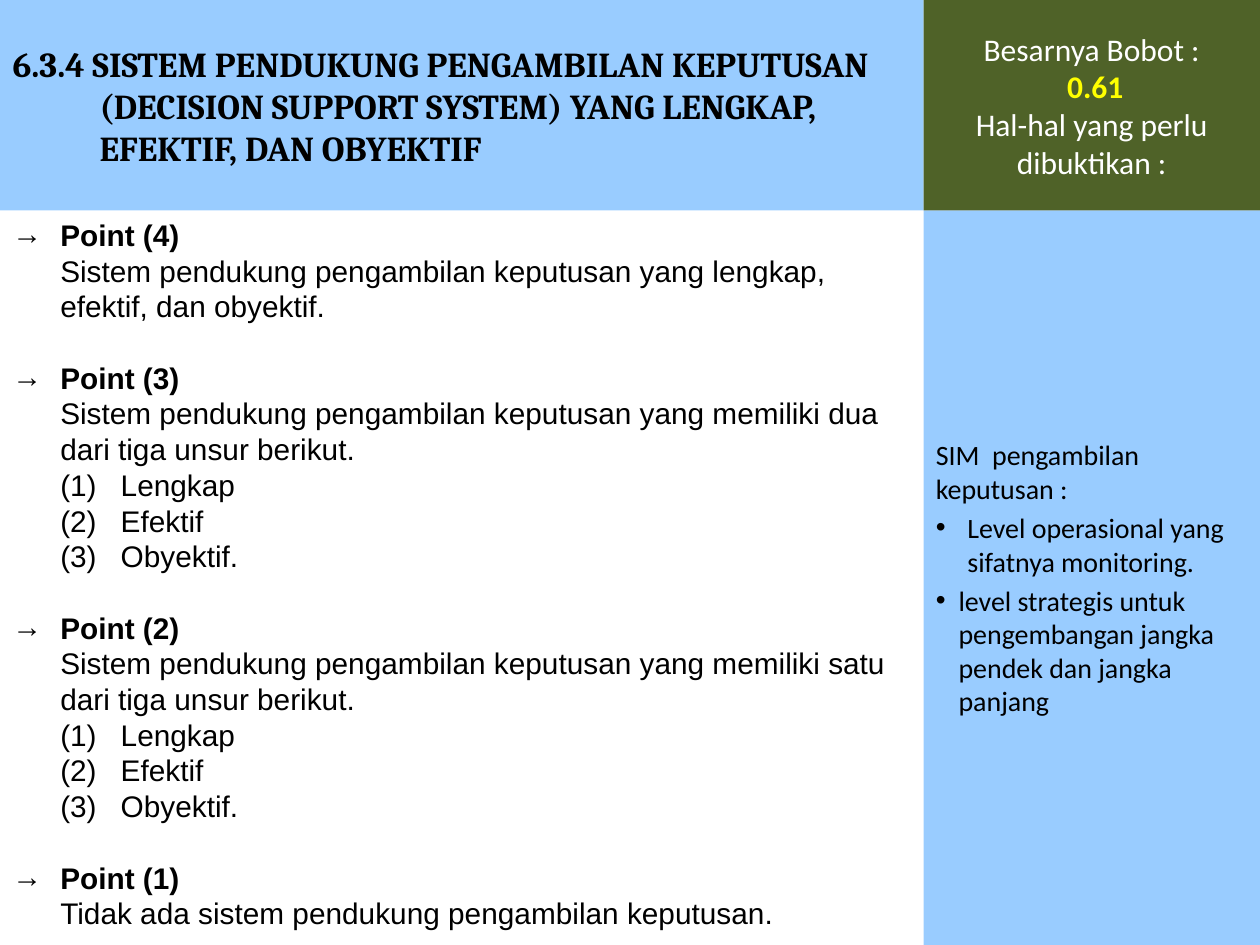
from dataclasses import dataclass

from lxml.etree import SubElement
from pptx import Presentation
from pptx.dml.color import RGBColor
from pptx.enum.shapes import MSO_SHAPE
from pptx.enum.text import MSO_ANCHOR, MSO_AUTO_SIZE, PP_ALIGN
from pptx.oxml.ns import qn
from pptx.util import Inches, Pt


@dataclass(frozen=True)
class Theme:
    """Colours, fonts and type sizes of the slide."""
    sky: str = "99CCFF"
    olive: str = "4F6228"
    black: str = "000000"
    white: str = "FFFFFF"
    yellow: str = "FFFF00"
    heading: tuple = ("Cambria", 20)
    points: tuple = ("Arial", 17)
    evidence: tuple = ("Calibri", 16)
    weight: tuple = ("Calibri", 18)


THEME = Theme()
WIDTH, HEIGHT = 10, 7.5
SPLIT, BAND = 7.33, 1.67
HANG = 0.38
ELEMENTS = ("Lengkap", "Efektif", "Obyektif.")
POINTS = (
    ("Point (4)", "Sistem pendukung pengambilan keputusan yang lengkap, efektif, dan obyektif.", ()),
    ("Point (3)", "Sistem pendukung pengambilan keputusan yang memiliki dua dari tiga unsur berikut.", ELEMENTS),
    ("Point (2)", "Sistem pendukung pengambilan keputusan yang memiliki satu dari tiga unsur berikut.", ELEMENTS),
    ("Point (1)", "Tidak ada sistem pendukung pengambilan keputusan.", ()),
)
EVIDENCE = (
    ("Level operasional yang sifatnya monitoring.", 0.25),
    ("level strategis untuk pengembangan jangka pendek dan jangka panjang", 0.18),
)


def apply_format(target, values):
    """Set each named attribute on the target."""
    for name, value in values.items():
        setattr(target, name, value)


def place(element, left, top, width, height):
    """Position an element in inches."""
    box = dict(left=left, top=top, width=width, height=height)
    apply_format(element, {side: Inches(length) for side, length in box.items()})


def paint(element, colour):
    """Give an element a plain fill without an outline."""
    element.fill.solid()
    element.fill.fore_color.rgb = RGBColor.from_string(colour)
    element.line.fill.background()


def prepare_frame(frame, anchor):
    """Wrap the text and fix its vertical anchor."""
    apply_format(frame, {"word_wrap": True, "auto_size": MSO_AUTO_SIZE.NONE,
                         "vertical_anchor": anchor})


def add_panel(slide, colour, left, top, width, height):
    """Add a filled rectangle and return its text frame."""
    panel = slide.shapes.add_shape(MSO_SHAPE.RECTANGLE, 0, 0, 0, 0)
    place(panel, left, top, width, height)
    panel.shadow.inherit = False
    paint(panel, colour)
    prepare_frame(panel.text_frame, MSO_ANCHOR.MIDDLE)
    return panel.text_frame


def write(frame, text, style, colour=THEME.black, bold=False, margin=0.0,
          hang=0.0, bullet=None, **paragraph_format):
    """Write one paragraph, reusing the empty first one."""
    first = frame.paragraphs[0]
    paragraph = frame.add_paragraph() if first.runs else first
    apply_format(paragraph, {"alignment": PP_ALIGN.LEFT, **paragraph_format})
    properties = paragraph._p.get_or_add_pPr()
    properties.set("marL", str(Inches(margin)))
    properties.set("indent", str(-Inches(hang)))
    if bullet:
        SubElement(properties, qn("a:buFont"), typeface="Arial")
        SubElement(properties, qn("a:buChar"), char=bullet)
    run = paragraph.add_run()
    run.text = text
    family, size = style
    apply_format(run.font, {"name": family, "size": Pt(size), "bold": bold})
    run.font.color.rgb = RGBColor.from_string(colour)


def add_heading(slide):
    """Fill the title placeholder as the heading band."""
    heading = slide.shapes.title
    place(heading, 0, 0, SPLIT, BAND)
    paint(heading, THEME.sky)
    prepare_frame(heading.text_frame, MSO_ANCHOR.MIDDLE)
    write(heading.text_frame,
          "6.3.4 SISTEM PENDUKUNG PENGAMBILAN KEPUTUSAN (DECISION SUPPORT SYSTEM) "
          "YANG LENGKAP, EFEKTIF, DAN OBYEKTIF",
          THEME.heading, bold=True, margin=0.69, hang=0.69)


def add_points(slide):
    """List the scoring points with their numbered elements."""
    box = slide.shapes.add_textbox(0, 0, 0, 0)
    place(box, 0, BAND, 7.25, HEIGHT - BAND)
    frame = box.text_frame
    prepare_frame(frame, MSO_ANCHOR.TOP)
    number_width = 0.48
    point_gap = Pt(THEME.points[1] * 1.2)
    for index, (label, description, elements) in enumerate(POINTS):
        write(frame, label, THEME.points, bold=True, margin=HANG, hang=HANG, bullet="→",
              space_before=point_gap if index else 0)
        write(frame, description, THEME.points, margin=HANG)
        for number, element in enumerate(elements, 1):
            write(frame, f"({number})\t{element}", THEME.points,
                  margin=HANG + number_width, hang=number_width)


def add_evidence(slide):
    """Describe the evidence in the side panel."""
    frame = add_panel(slide, THEME.sky, SPLIT, BAND, WIDTH - SPLIT, HEIGHT - BAND)
    gap = Pt(THEME.evidence[1] * 0.2)
    write(frame, "SIM  pengambilan keputusan :", THEME.evidence, space_before=gap)
    for text, hang in EVIDENCE:
        write(frame, text, THEME.evidence, margin=hang, hang=hang, bullet="•", space_before=gap)


def add_weight(slide):
    """Show the weight in the corner panel."""
    frame = add_panel(slide, THEME.olive, SPLIT, 0, WIDTH - SPLIT, BAND)
    for text, colour, bold in (("Besarnya Bobot :", THEME.white, False),
                               (" 0.61", THEME.yellow, True),
                               ("Hal-hal yang perlu dibuktikan :", THEME.white, False)):
        write(frame, text, THEME.weight, colour, bold, alignment=PP_ALIGN.CENTER)


def main():
    """Build and save the slide."""
    deck = Presentation()
    apply_format(deck, {"slide_width": Inches(WIDTH), "slide_height": Inches(HEIGHT)})
    slide = deck.slides.add_slide(deck.slide_layouts[5])
    for add_part in (add_points, add_heading, add_evidence, add_weight):
        add_part(slide)
    deck.save("out.pptx")


if __name__ == "__main__":
    main()
